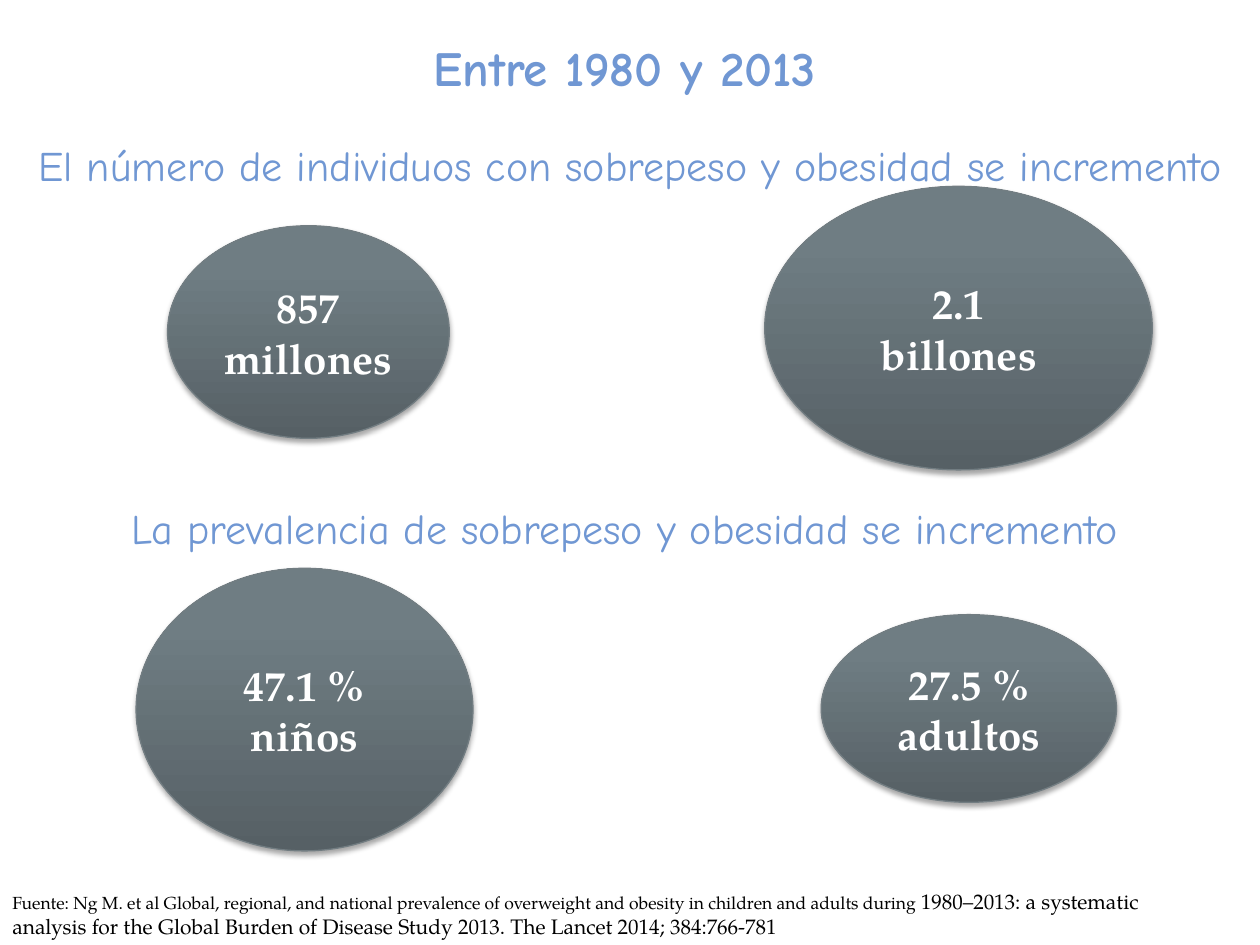
import pptx
import pptx.dml.color
import pptx.enum.shapes
import pptx.enum.text
import pptx.oxml
import pptx.oxml.ns
import pptx.util

Pt = pptx.util.Pt
RGBColor = pptx.dml.color.RGBColor
ALIGN = pptx.enum.text.PP_ALIGN
ANCHOR = pptx.enum.text.MSO_ANCHOR

BLUE = RGBColor(0x70, 0x97, 0xD3)
WHITE = RGBColor(0xFF, 0xFF, 0xFF)
BLACK = RGBColor(0x00, 0x00, 0x00)
OUTLINE = RGBColor(0x72, 0x7D, 0x82)
SLATE_STOPS = [(0, RGBColor(0x56, 0x60, 0x65)),
               (80, RGBColor(0x6F, 0x7D, 0x83)),
               (100, RGBColor(0x6F, 0x7E, 0x84))]
HEADING_FONT = "Comic Neue"
BODY_FONT = "TeX Gyre Pagella"

# Content: boxes are (left, top, width, height) in points
TITLE = ("Entre 1980 y 2013", (33, 6, 648, 52.5))
HEADINGS = [
    ("El número de individuos con sobrepeso y obesidad se incremento", (0, 49, 720, 90)),
    ("La prevalencia de sobrepeso y obesidad se incremento", (23.75, 268.5, 666, 66)),
]
FIGURES = [
    ("857 millones", (95.75, 129, 161, 121.5)),
    ("2.1\nbillones", (437, 106.5, 221.5, 162)),
    ("47.1 % niños", (77.75, 324.75, 192.5, 161.5)),
    ("27.5 % adultos", (469.25, 351.25, 168.75, 107.25)),
]
SOURCE_RUNS = [
    ("Fuente: Ng M. et al Global, regional, and national prevalence of overweight "
     "and obesity in children and adults during", 10),
    (" 1980–2013: a systematic analysis for the Global Burden of Disease Study 2013. "
     "The Lancet 2014; 384:766-781", 12),
]
SOURCE_BOX = (0, 504, 695.5, 36)


def points(box):
    return [Pt(length) for length in box]


def style(run, font, size, color, bold=False):
    run.font.name, run.font.size, run.font.bold = font, Pt(size), bold
    run.font.color.rgb = color


def write(shape, text, font, size, color, bold=False, anchor=ANCHOR.MIDDLE):
    frame = shape.text_frame
    frame.text = text
    frame.word_wrap = True
    frame.vertical_anchor = anchor
    for paragraph in frame.paragraphs:
        paragraph.alignment = ALIGN.CENTER
        for run in paragraph.runs:
            style(run, font, size, color, bold)


def shade(shape):
    """Vertical slate gradient, thin outline and a soft shadow below."""
    ns = pptx.oxml.ns.nsdecls("a")
    stops = "".join(f'<a:gs pos="{pos * 1000}"><a:srgbClr val="{color}"/></a:gs>'
                    for pos, color in SLATE_STOPS)
    shape.fill.gradient()
    gradient = shape._element.spPr.find(pptx.oxml.ns.qn("a:gradFill"))
    gradient.getparent().replace(gradient, pptx.oxml.parse_xml(
        f'<a:gradFill {ns} rotWithShape="1"><a:gsLst>{stops}</a:gsLst>'
        '<a:lin ang="16200000" scaled="0"/></a:gradFill>'))
    shape.line.color.rgb = OUTLINE
    shape.line.width = Pt(0.75)
    shape.shadow.inherit = False
    effects = shape._element.spPr.find(pptx.oxml.ns.qn("a:effectLst"))
    effects.append(pptx.oxml.parse_xml(
        f'<a:outerShdw {ns} blurRad="{Pt(3.1)}" dist="{Pt(1.8)}" dir="5400000" '
        'rotWithShape="0"><a:srgbClr val="000000"><a:alpha val="35000"/>'
        '</a:srgbClr></a:outerShdw>'))


def main():
    deck = pptx.Presentation()
    deck.slide_width, deck.slide_height = Pt(720), Pt(540)
    slide = deck.slides.add_slide(deck.slide_layouts[5])
    shapes = slide.shapes

    # Title
    text, box = TITLE
    title = shapes.title
    title.left, title.top, title.width, title.height = points(box)
    write(title, text, HEADING_FONT, 28, BLUE, True, ANCHOR.BOTTOM)
    title.text_frame.auto_size = pptx.enum.text.MSO_AUTO_SIZE.NONE
    title.text_frame.paragraphs[0].line_spacing = Pt(58)

    # Section headings
    for text, box in HEADINGS:
        write(shapes.add_textbox(*points(box)), text, HEADING_FONT, 24, BLUE)

    # Key figures
    for text, box in FIGURES:
        figure = shapes.add_shape(pptx.enum.shapes.MSO_SHAPE.OVAL, *points(box))
        shade(figure)
        write(figure, text, BODY_FONT, 24, WHITE, True)

    # Source
    source = shapes.add_textbox(*points(SOURCE_BOX)).text_frame
    source.word_wrap = True
    for text, size in SOURCE_RUNS:
        run = source.paragraphs[0].add_run()
        run.text = text
        style(run, BODY_FONT, size, BLACK)

    deck.save("out.pptx")


if __name__ == "__main__":
    main()
